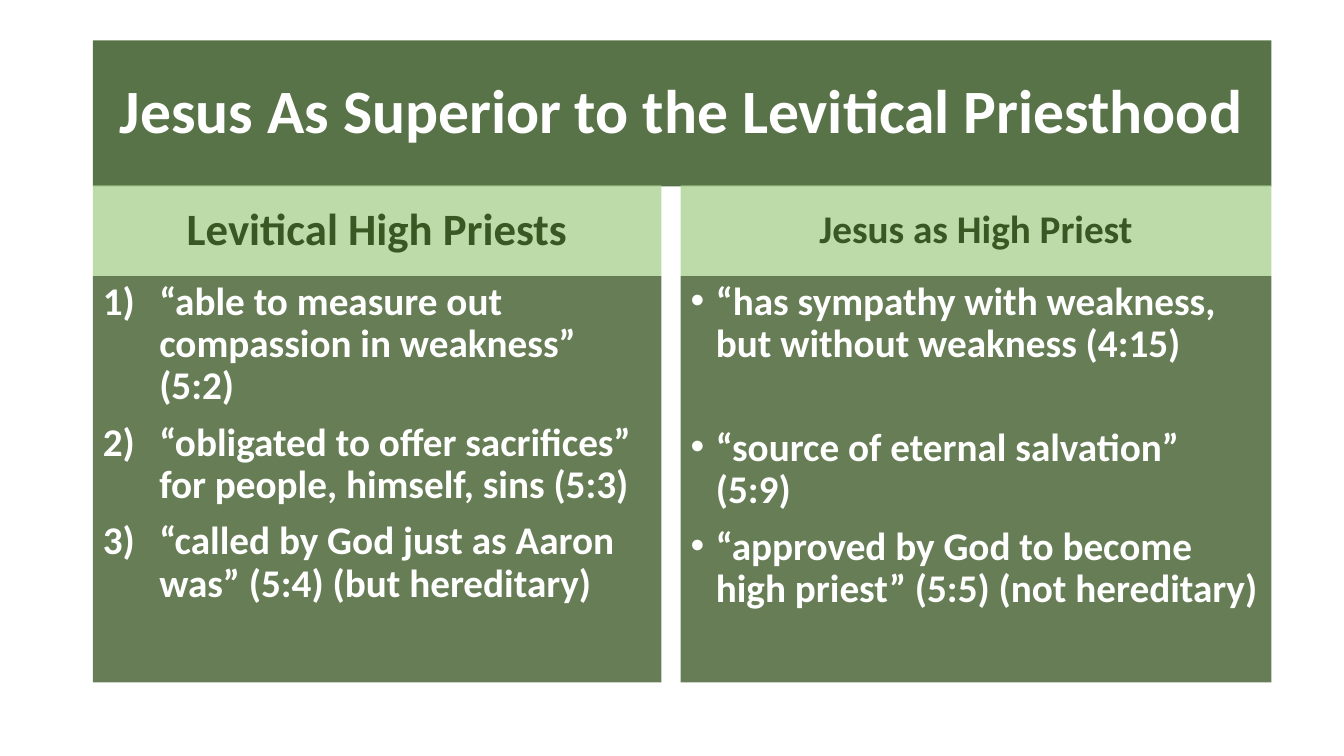
from lxml import etree
from pptx import Presentation
from pptx.dml.color import RGBColor
from pptx.enum.text import MSO_ANCHOR, MSO_AUTO_SIZE, PP_ALIGN
from pptx.oxml.ns import qn
from pptx.util import Inches, Pt

MIDDLE, TOP = MSO_ANCHOR.MIDDLE, MSO_ANCHOR.TOP
CENTER, LEFT = PP_ALIGN.CENTER, PP_ALIGN.LEFT
NO_FIT = MSO_AUTO_SIZE.NONE
DARK = RGBColor(0x38, 0x57, 0x23)
LIGHT = RGBColor(0xA9, 0xD1, 0x8E)
WHITE = RGBColor(0xFF, 0xFF, 0xFF)
FONT = "Calibri"

EDGE = 0.92
COLUMNS = [
    {
        "left": EDGE, "width": 5.64, "size": 32,
        "head": "Levitical High Priests",
        "mark": ("a:buAutoNum", "type", "arabicParenR"), "indent": 0.56,
        "items": [
            ("“able to measure out compassion in weakness” (5:2)", 0),
            ("“obligated to offer sacrifices” for people, himself, sins (5:3)", 0),
            ("“called by God just as Aaron was” (5:4) (but hereditary)", 0),
        ],
    },
    {
        "left": 6.75, "width": 5.86, "size": 28,
        "head": "Jesus as High Priest",
        "mark": ("a:buChar", "char", "•"), "indent": 0.25,
        "items": [
            ("“has sympathy with weakness, but without weakness (4:15)", 34),
            ("“source of eternal salvation”\n(5:9)", 0),
            ("“approved by God to become high priest” (5:5) (not hereditary)", 0),
        ],
    },
]


def panel(shape, box, color, alpha, anchor):
    """Place a placeholder in its box and give it a translucent fill."""
    shape.left, shape.top, shape.width, shape.height = map(Inches, box)
    shape.fill.solid()
    shape.fill.fore_color.rgb = color
    tint = shape.element.spPr.find(qn("a:solidFill"))[0]
    etree.SubElement(tint, qn("a:alpha"), val=str(alpha * 1000))
    frame = shape.text_frame
    frame.word_wrap = True
    frame.auto_size = NO_FIT
    frame.vertical_anchor = anchor
    return frame


def write(para, text, size=28, color=WHITE, align=LEFT, before=0, after=0):
    """Write one bold paragraph with its format."""
    para.text = text
    para.alignment = align
    para.line_spacing = 0.9
    para.space_before, para.space_after = Pt(before), Pt(after)
    for run in para.runs:
        font = run.font
        font.name, font.size, font.bold = FONT, Pt(size), True
        font.color.rgb = color


def bullet(para, mark, indent):
    """Give a paragraph its mark and hanging indent."""
    tag, key, value = mark
    props = para._p.get_or_add_pPr()
    props.set("marL", str(Inches(indent)))
    props.set("indent", str(-Inches(indent)))
    etree.SubElement(props, qn(tag)).set(key, value)


def column(head, body, data, top):
    """Fill one column: a heading above its list."""
    left, width = data["left"], data["width"]
    frame = panel(head, (left, top, width, 0.9), LIGHT, 77, MIDDLE)
    write(frame.paragraphs[0], data["head"], size=data["size"], color=DARK, align=CENTER)
    frame = panel(body, (left, top + 0.9, width, 4.03), DARK, 77, TOP)
    for rank, (text, after) in enumerate(data["items"]):
        para = frame.add_paragraph() if rank else frame.paragraphs[0]
        bullet(para, data["mark"], data["indent"])
        write(para, text, before=10 if rank else 0, after=after)


def main():
    """Build the comparison slide and save it."""
    deck = Presentation()
    deck.slide_width, deck.slide_height = Inches(13.33), Inches(7.5)
    slide = deck.slides.add_slide(deck.slide_layouts[4])
    title, *parts = slide.placeholders
    frame = panel(title, (EDGE, 0.4, 11.69, 1.45), DARK, 83, MIDDLE)
    write(frame.paragraphs[0], "Jesus As Superior to the Levitical Priesthood",
          size=44, align=CENTER)
    for head, body, data in zip(parts[::2], parts[1::2], COLUMNS):
        column(head, body, data, 1.84)
    deck.save("out.pptx")


if __name__ == "__main__":
    main()
